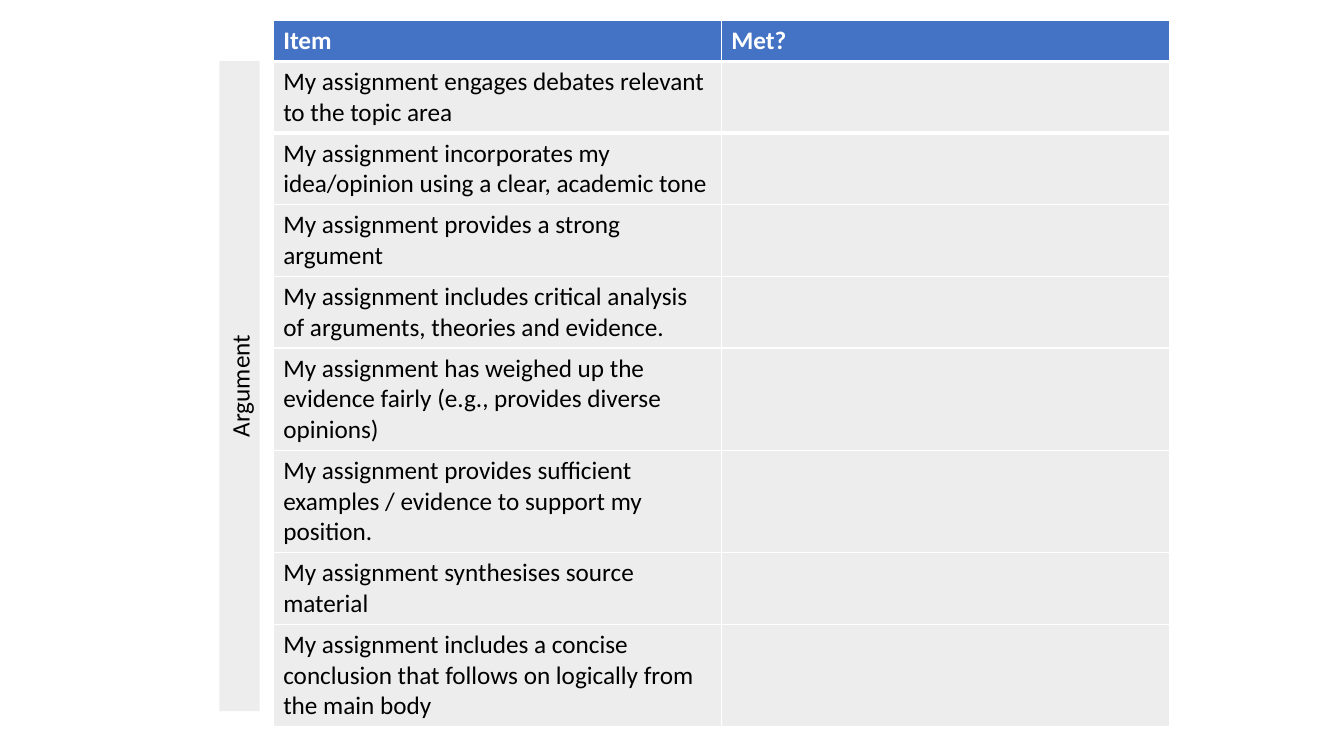
from dataclasses import dataclass

from lxml import etree
from pptx import Presentation
from pptx.dml.color import RGBColor
from pptx.enum.shapes import MSO_SHAPE
from pptx.enum.text import MSO_ANCHOR, PP_ALIGN
from pptx.oxml.ns import qn
from pptx.util import Pt

RECT = MSO_SHAPE.RECTANGLE
LEFT, CENTER = PP_ALIGN.LEFT, PP_ALIGN.CENTER
TOP, MIDDLE = MSO_ANCHOR.TOP, MSO_ANCHOR.MIDDLE
SCALE = 9144  # EMU in one px, 100 px to the inch


@dataclass(frozen=True)
class Theme:
    font: str = "Calibri"
    size: int = 18
    ink: str = "000000"
    white: str = "FFFFFF"
    head: str = "4472C4"
    pale: str = "EDEDED"
    thin: int = 1
    thick: int = 3


HEADS = ["Item", "Met?"]
ITEMS = [
    ("My assignment engages debates relevant to the topic area", 70),
    ("My assignment incorporates my idea/opinion using a clear, academic tone", 70),
    ("My assignment provides a strong argument", 70),
    ("My assignment includes critical analysis of arguments, theories and evidence.", 70),
    ("My assignment has weighed up the evidence fairly (e.g., provides diverse opinions)", 100),
    ("My assignment provides sufficient examples / evidence to support my position.", 100),
    ("My assignment synthesises source material", 70),
    ("My assignment includes a concise conclusion that follows on logically from the main body", 100),
]


def px(*sizes):
    return [size * SCALE for size in sizes]


def paint(fill, color):
    fill.solid()
    fill.fore_color.rgb = RGBColor.from_string(color)


def edge(cell, color, widths):
    """Draw the left, right, top and bottom borders, widths in points."""
    props = cell._tc.get_or_add_tcPr()
    for spot, (side, width) in enumerate(zip("LRTB", widths)):
        line = etree.Element(qn(f"a:ln{side}"), w=str(Pt(width)))
        solid = etree.SubElement(line, qn("a:solidFill"))
        etree.SubElement(solid, qn("a:srgbClr"), val=color)
        props.insert(spot, line)


class Page:
    def __init__(self, deck, theme):
        self.theme = theme
        self.slide = deck.slides.add_slide(deck.slide_layouts[6])

    def label(self, frame, text, color, bold=False, align=LEFT, anchor=TOP):
        frame.word_wrap = True
        frame.vertical_anchor = anchor
        para = frame.paragraphs[0]
        para.alignment = align
        para.font.size = Pt(self.theme.size)
        if text:
            run = para.add_run()
            run.text = text
            run.font.name = self.theme.font
            run.font.size = Pt(self.theme.size)
            run.font.bold = bold
            run.font.color.rgb = RGBColor.from_string(color)

    def table(self, box, rows, highs, fill, color, bold=False):
        """Add a table of equal columns whose first row has a thick base."""
        look = self.theme
        count = len(rows[0])
        grid = self.slide.shapes.add_table(len(rows), count, *px(*box)).table
        grid.first_row = grid.horz_banding = False
        for row, high in zip(grid.rows, highs):
            row.height = high * SCALE
        for r, texts in enumerate(rows):
            top = look.thick if r == 1 else look.thin
            base = look.thick if r == 0 else look.thin
            for c, text in enumerate(texts):
                cell = grid.cell(r, c)
                paint(cell.fill, fill)
                edge(cell, look.white, (look.thin, look.thin, top, base))
                self.label(cell.text_frame, text, color, bold=bold)

    def band(self, box, text, fill, turn):
        shape = self.slide.shapes.add_shape(RECT, *px(*box))
        shape.shadow.inherit = False
        shape.rotation = turn
        paint(shape.fill, fill)
        shape.line.fill.background()
        self.label(shape.text_frame, text, self.theme.ink,
                   align=CENTER, anchor=MIDDLE)


def main():
    deck = Presentation()
    deck.slide_width, deck.slide_height = px(1333, 750)
    theme = Theme()
    page = Page(deck, theme)

    left, wide, top, head = 271, 889, 20, 41
    highs = [high for _, high in ITEMS]
    rows = [(text, "") for text, _ in ITEMS]
    page.table((left, top + head, wide, sum(highs)), rows, highs,
               theme.pale, theme.ink)
    page.band((-85, 363, 645, 40), "Argument", theme.pale, 270)
    page.table((left, top, wide, head), [HEADS], [head],
               theme.head, theme.white, bold=True)
    deck.save("out.pptx")


if __name__ == "__main__":
    main()
